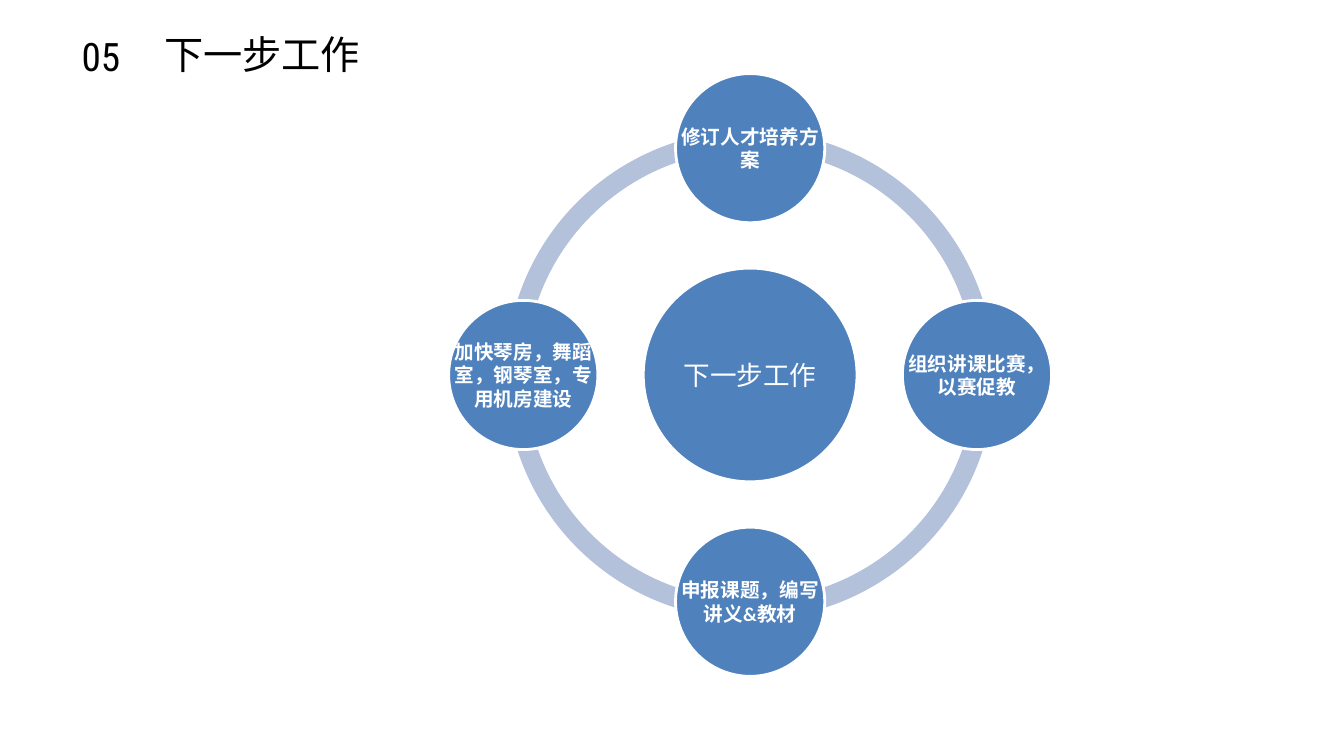
from dataclasses import dataclass
from math import cos, radians, sin

from lxml import etree
from pptx import Presentation
from pptx.dml.color import RGBColor
from pptx.enum.shapes import MSO_SHAPE as Preset
from pptx.enum.text import MSO_ANCHOR as Anchor, PP_ALIGN as Align
from pptx.oxml.ns import qn
from pptx.shapes.autoshape import Shape
from pptx.slide import Slide
from pptx.util import Inches, Pt

BLUE, PALE_BLUE, WHITE, BLACK = "4F81BD", "B3C1DB", "FFFFFF", "000000"
CJK_FONT = "Noto Sans CJK SC"
CENTER_X, CENTER_Y = 7.44, 3.72
ORBIT_RADIUS = 2.25
RING_SIZE, RING_THICKNESS = 4.85, 0.04
ARC_STEP = 90


@dataclass
class Disc:
    text: str
    x: float
    y: float
    diameter: float
    size: float
    inset: float = 0.02
    bold: bool = True
    line_spacing: float | None = 16.8


def color(value: str) -> RGBColor:
    return RGBColor.from_string(value)


def add_round_shape(slide: Slide, preset: Preset, x: float, y: float, size: float, fill: str) -> Shape:
    """Add a square-bounded shape centred on (x, y), without outline."""
    shape = slide.shapes.add_shape(
        preset, Inches(x - size / 2), Inches(y - size / 2), Inches(size), Inches(size)
    )
    shape.shadow.inherit = False
    shape.fill.solid()
    shape.fill.fore_color.rgb = color(fill)
    shape.line.fill.background()
    return shape


def add_text(
    slide: Slide,
    text: str,
    left: float,
    top: float,
    width: float,
    height: float,
    *,
    size: float,
    font: str = "Calibri",
    fill: str = WHITE,
    bold: bool = False,
    align: Align = Align.CENTER,
    anchor: Anchor = Anchor.MIDDLE,
    inset: float = 0,
    line_spacing: float | None = None,
) -> None:
    box = slide.shapes.add_textbox(Inches(left), Inches(top), Inches(width), Inches(height))
    frame = box.text_frame
    frame.word_wrap = True
    frame.vertical_anchor = anchor
    frame.margin_left = frame.margin_right = Inches(inset)
    frame.margin_top = frame.margin_bottom = Inches(inset)
    paragraph = frame.paragraphs[0]
    paragraph.alignment = align
    if line_spacing:
        paragraph.line_spacing = Pt(line_spacing)
    run = paragraph.add_run()
    run.text = text
    run.font.name = font
    run.font.size = Pt(size)
    run.font.bold = bold
    run.font.color.rgb = color(fill)
    east_asian = etree.SubElement(run._r.get_or_add_rPr(), qn("a:ea"))
    east_asian.set("typeface", CJK_FONT)


def add_ring(slide: Slide) -> None:
    for start in range(0, 360, ARC_STEP):
        arc = add_round_shape(slide, Preset.BLOCK_ARC, CENTER_X, CENTER_Y, RING_SIZE, PALE_BLUE)
        # Angles are stored in 1/60000 degree, adjustments are scaled by 100000
        arc.adjustments[0] = start * 0.6
        arc.adjustments[1] = (start + ARC_STEP) % 360 * 0.6
        arc.adjustments[2] = RING_THICKNESS


def add_disc(slide: Slide, disc: Disc) -> None:
    circle = add_round_shape(slide, Preset.OVAL, disc.x, disc.y, disc.diameter, BLUE)
    circle.line.color.rgb = color(WHITE)
    circle.line.width = Pt(2)
    add_text(
        slide,
        disc.text,
        disc.x - disc.diameter / 2,
        disc.y - disc.diameter / 2,
        disc.diameter,
        disc.diameter,
        size=disc.size,
        bold=disc.bold,
        inset=disc.inset,
        line_spacing=disc.line_spacing,
    )


def main() -> None:
    presentation = Presentation()
    presentation.slide_width, presentation.slide_height = Inches(13.33), Inches(7.5)
    slide = presentation.slides.add_slide(presentation.slide_layouts[6])

    add_ring(slide)
    add_disc(slide, Disc("下一步工作", CENTER_X, CENTER_Y, 2.12, 19, 0.03, False, None))
    tasks = (
        "修订人才培养方案",
        "组织讲课比赛，以赛促教",
        "申报课题，编写讲义&教材",
        "加快琴房，舞蹈室，钢琴室，专用机房建设",
    )
    for index, task in enumerate(tasks):
        angle = radians(index * 360 / len(tasks) - 90)
        x = CENTER_X + ORBIT_RADIUS * cos(angle)
        y = CENTER_Y + ORBIT_RADIUS * sin(angle)
        add_disc(slide, Disc(task, x, y, 1.48, 14))

    heading = dict(size=28, fill=BLACK, align=Align.LEFT, anchor=Anchor.TOP)
    add_text(slide, "05", 0.81, 0.35, 0.9, 0.44, font="Roboto Condensed", line_spacing=31.4, **heading)
    add_text(slide, "下一步工作", 1.63, 0.38, 2.14, 0.39, font=CJK_FONT, line_spacing=27.9, **heading)

    presentation.save("out.pptx")


if __name__ == "__main__":
    main()
